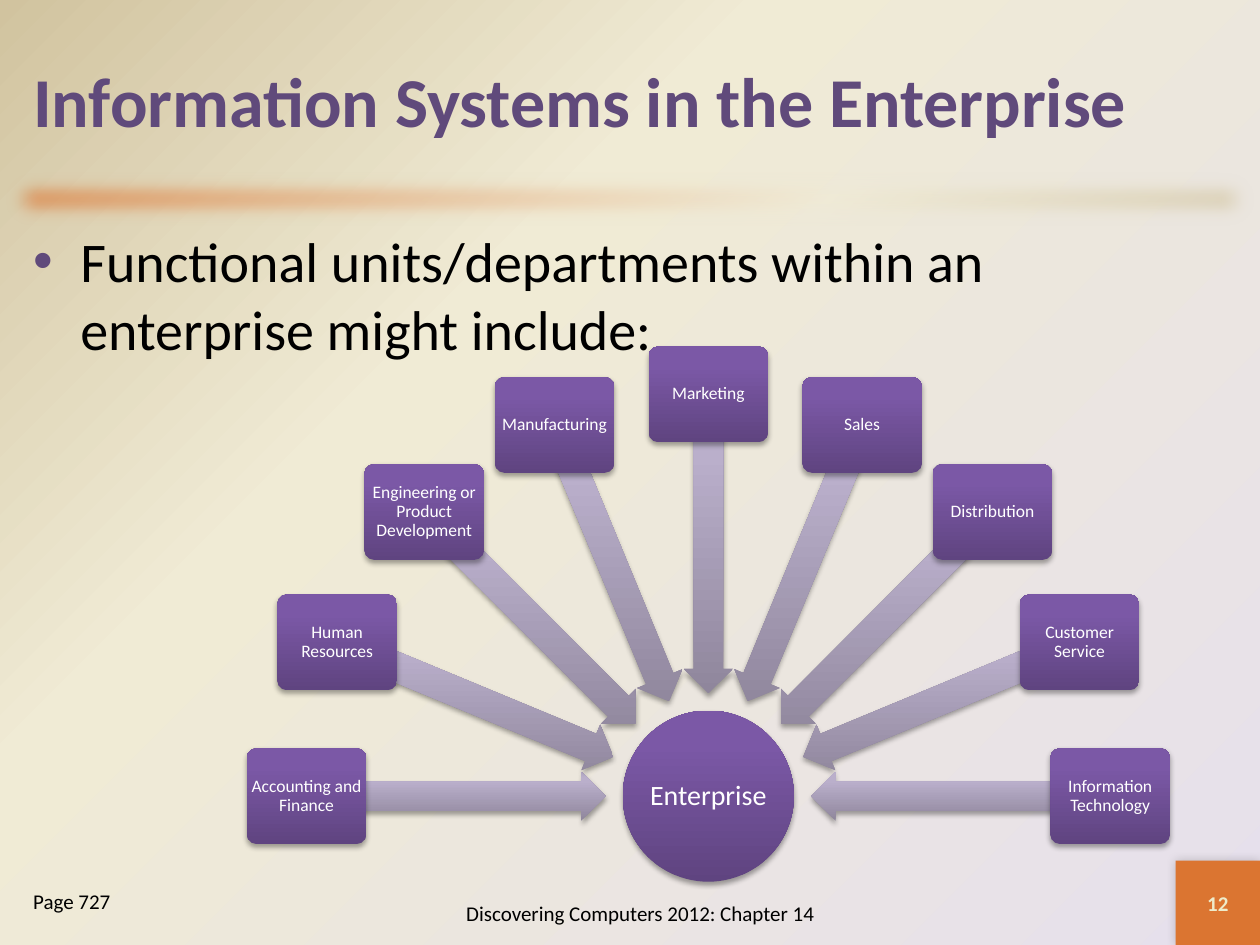
from dataclasses import dataclass
from math import cos, radians, sin

from pptx import Presentation
from pptx.dml.color import RGBColor
from pptx.enum.shapes import MSO_SHAPE
from pptx.enum.text import MSO_ANCHOR, PP_ALIGN
from pptx.oxml import parse_xml
from pptx.oxml.ns import nsdecls, qn
from pptx.util import Cm, Pt

RECT, ROUND = MSO_SHAPE.RECTANGLE, MSO_SHAPE.ROUNDED_RECTANGLE
OVAL, ARROW = MSO_SHAPE.OVAL, MSO_SHAPE.LEFT_ARROW
TOP, MID = MSO_ANCHOR.TOP, MSO_ANCHOR.MIDDLE
LEFT, CENTER = PP_ALIGN.LEFT, PP_ALIGN.CENTER


@dataclass(frozen=True)
class Theme:
    font: str = "Calibri"
    purple: str = "604A7B"
    black: str = "000000"
    white: str = "FFFFFF"
    cream: str = "EEEBCA"
    orange: str = "DB7531"
    back: tuple = ((0, "E6E0EC"), (65, "F0EBD5"), (100, "D1C39F"))
    bar: tuple = ((0, "DB7531"), (65, "F0EBD5"), (100, "D1C39F"))
    node: tuple = ((0, "5F4480"), (80, "7B58A6"), (100, "7C57A8"))
    arm: tuple = ((0, "8F869C"), (80, "BAAFCB"), (100, "BAAFCC"))
    title: int = 40
    body: int = 32
    hub: int = 16
    note: int = 12
    label: int = 10


class Deck:
    def __init__(self, theme):
        self.theme = theme
        self.prs = Presentation()
        self.prs.slide_width, self.prs.slide_height = Cm(25.4), Cm(19.05)
        self.slide = self.prs.slides.add_slide(self.prs.slide_layouts[6])

    def blend(self, fill, root, stops, way):
        """Put a gradient with the given stops and direction in a fill."""
        fill.gradient()
        old = next(root.iter(qn("a:gradFill")))
        marks = "".join(f'<a:gs pos="{pos * 1000}"><a:srgbClr val="{tone}"/></a:gs>'
                        for pos, tone in stops)
        old.getparent().replace(old, parse_xml(
            f'<a:gradFill {nsdecls("a")} rotWithShape="0">'
            f'<a:gsLst>{marks}</a:gsLst>{way}</a:gradFill>'))

    def backdrop(self, stops):
        self.blend(self.slide.background.fill, self.slide.element, stops,
                   '<a:path path="circle"><a:fillToRect l="100000" t="100000"/></a:path>')

    def shape(self, kind, box, fill, angle=270, turn=0, adjust=()):
        item = self.slide.shapes.add_shape(kind, *map(Cm, box))
        item.shadow.inherit = False
        item.line.fill.background()
        item.rotation = turn
        for i, value in enumerate(adjust):
            item.adjustments[i] = value
        if isinstance(fill, str):
            item.fill.solid()
            item.fill.fore_color.rgb = RGBColor.from_string(fill)
        else:
            self.blend(item.fill, item.element, fill,
                       f'<a:lin ang="{angle * 60000}" scaled="0"/>')
        return item

    def effect(self, item, xml):
        effects = item.element.spPr.find(qn("a:effectLst"))
        effects.append(parse_xml(xml.replace(" ", f' {nsdecls("a")} ', 1)))

    def shade(self, item, alpha=35, blur=3.1, dist=1.8, angle=90):
        self.effect(item, f'<a:outerShdw blurRad="{Pt(blur)}" dist="{Pt(dist)}" '
                          f'dir="{angle * 60000}" algn="ctr" rotWithShape="0">'
                          f'<a:srgbClr val="{self.theme.black}">'
                          f'<a:alpha val="{alpha * 1000}"/></a:srgbClr></a:outerShdw>')

    def soften(self, item, radius):
        self.effect(item, f'<a:softEdge rad="{Pt(radius)}"/>')

    def label(self, item, text, size, color, bold=False, align=CENTER,
              anchor=MID, wrap=True, inset=None, spacing=None, bullet=None):
        frame = item.text_frame
        look = {"word_wrap": wrap, "vertical_anchor": anchor}
        if inset is not None:
            look.update({f"margin_{side}": Cm(inset)
                         for side in ("left", "right", "top", "bottom")})
        para = frame.paragraphs[0]
        para.text = text
        if bullet:
            props = para._p.get_or_add_pPr()
            props.set("marL", str(Cm(0.95)))
            props.set("indent", str(-Cm(0.95)))
            for xml in (f'<a:buClr {nsdecls("a")}><a:srgbClr val="{bullet}"/></a:buClr>',
                        f'<a:buFont {nsdecls("a")} typeface="Arial"/>',
                        f'<a:buChar {nsdecls("a")} char="•"/>'):
                props.append(parse_xml(xml))
        for target, values in (
                (frame, look),
                (para, {"alignment": align, "line_spacing": spacing}),
                (para.font, {"name": self.theme.font, "size": Pt(size), "bold": bold})):
            for name, value in values.items():
                setattr(target, name, value)
        para.font.color.rgb = RGBColor.from_string(color)

    def text(self, box, *args, **style):
        self.label(self.slide.shapes.add_textbox(*map(Cm, box)), *args, **style)

    def node(self, kind, x, y, wide, high, text, size, adjust=(), wrap=True):
        item = self.shape(kind, (x - wide / 2, y - high / 2, wide, high),
                          self.theme.node, adjust=adjust)
        self.shade(item)
        self.label(item, text, size, self.theme.white, wrap=wrap, inset=0, spacing=0.9)

    def arm(self, x, y, wide, high, turn):
        self.shade(self.shape(ARROW, (x - wide / 2, y - high / 2, wide, high),
                              self.theme.arm, turn=turn, adjust=(0.6, 0.5)))


def main():
    theme = Theme()
    deck = Deck(theme)

    # Background, divider bar and page number
    deck.backdrop(theme.back)
    deck.soften(deck.shape(RECT, (0, 3.38, 25.4, 1.27), theme.bar, angle=45), 12.5)
    badge = deck.shape(RECT, (23.7, 17.35, 1.7, 1.7), theme.orange)
    deck.shade(badge, alpha=20, blur=6, dist=0, angle=225)
    deck.label(badge, "12", theme.note, theme.cream, bold=True)

    # Title, body and footers
    deck.text((0.42, 0.42, 24.57, 3.17), "Information Systems in the Enterprise",
              theme.title, theme.purple, bold=True, align=LEFT)
    deck.text((0.42, 4.45, 24.57, 12.9),
              "Functional units/departments within an enterprise might include:",
              theme.body, theme.black, align=LEFT, anchor=TOP, bullet=theme.purple)
    deck.text((7.62, 17.78, 10.58, 1.27), "Discovering Computers 2012: Chapter 14",
              theme.note, theme.black)
    deck.text((0.42, 17.78, 4.65, 1.27), "Page 727", theme.note, theme.black,
              align=LEFT, anchor=TOP)

    # Hub, with the units on a half circle around it
    hub_x, hub_y = 14.28, 16.05
    deck.node(OVAL, hub_x, hub_y, 3.45, 3.45, "Enterprise", theme.hub, wrap=False)
    units = ("Accounting and Finance", "Human Resources",
             "Engineering or Product Development", "Manufacturing", "Marketing",
             "Sales", "Distribution", "Customer Service", "Information Technology")
    step = 180 / (len(units) - 1)
    for i, unit in enumerate(units):
        turn = 180 + i * step
        dx, dy = cos(radians(turn)), sin(radians(turn))
        deck.arm(hub_x + 5.08 * dx, hub_y + 5.08 * dy, 6.02, 0.99, turn % 360)
        deck.node(ROUND, hub_x + 8.1 * dx, hub_y + 8.1 * dy, 2.41, 1.93, unit,
                  theme.label, adjust=(0.1,))

    deck.prs.save("out.pptx")


if __name__ == "__main__":
    main()
